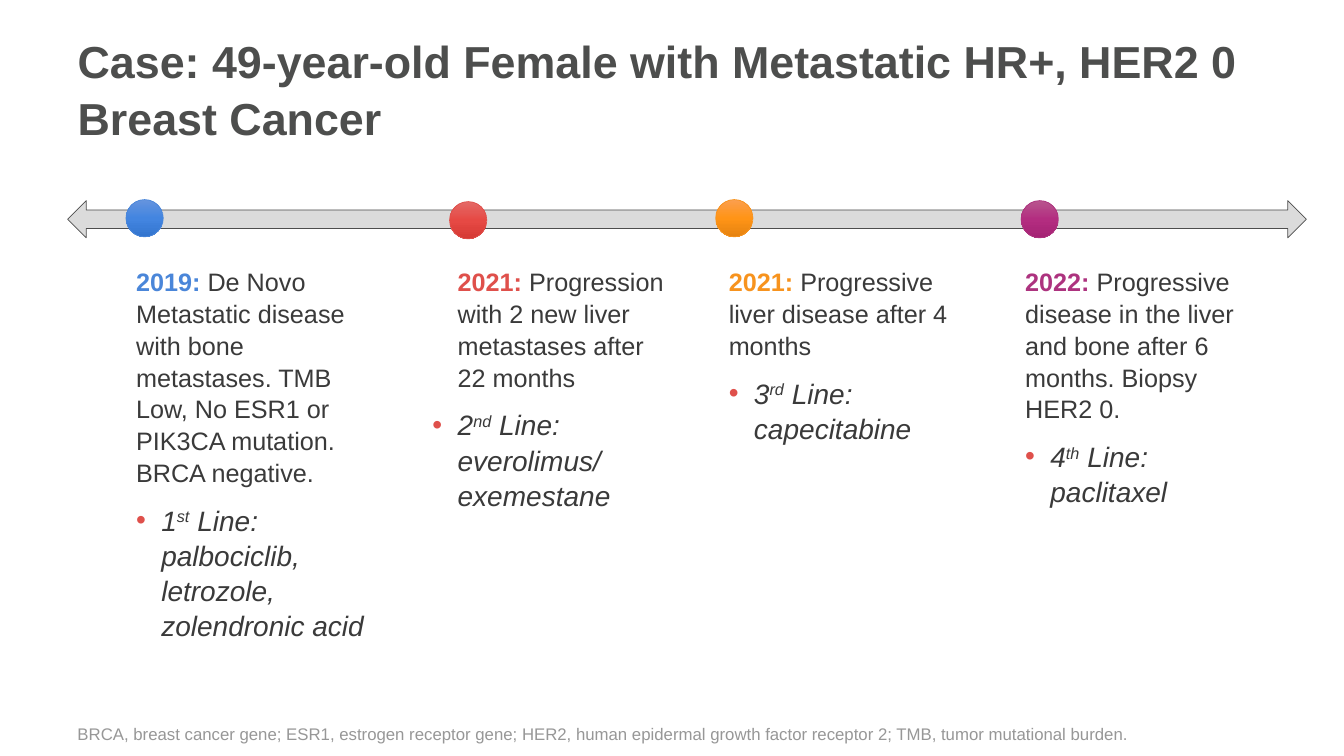
from copy import deepcopy
from lxml.etree import SubElement
from pptx import Presentation
from pptx.dml.color import RGBColor
from pptx.enum.shapes import MSO_SHAPE as SHAPE
from pptx.enum.text import MSO_ANCHOR as ANCHOR, MSO_AUTO_SIZE as FIT, PP_ALIGN as ALIGN
from pptx.oxml.ns import qn
from pptx.util import Inches, Pt

INK, BULLET = "3A3A3A", "DF504B"
MARGIN, WIDTH = 0.67, 11.75
COL_LEFT, COL_TOP, COL_WIDTH, COL_HEIGHT = 1.25, 2.58, 2.64, 3.69
COL_PITCH = 2.94
INDENT, DOT = 0.25, 0.37


def rgb(code):
    return RGBColor.from_string(code)


def write(paragraph, text, size=18, color=INK, bold=False, italic=False, raised=False):
    paragraph.alignment = ALIGN.LEFT
    paragraph.line_spacing = 1.05
    run = paragraph.add_run()
    run.text = text
    font = run.font
    font.name, font.size, font.bold, font.italic = "Arial", Pt(size), bold, italic
    font.color.rgb = rgb(color)
    if raised:
        run._r.get_or_add_rPr().set("baseline", "30000")


prs = Presentation()
prs.slide_width, prs.slide_height = Inches(13.333), Inches(7.5)
slide = prs.slides.add_slide(prs.slide_layouts.get_by_name("Comparison"))
shapes = slide.shapes

# Title
title = shapes.title
title.left, title.top, title.width, title.height = map(Inches, (MARGIN, 0.22, WIDTH, 1.3))
title.text_frame.vertical_anchor = ANCHOR.MIDDLE
title.text_frame.auto_size = FIT.NONE
write(title.text_frame.paragraphs[0],
      "Case: 49-year-old Female with Metastatic HR+, HER2 0 Breast Cancer",
      size=32, color="4D4E4D", bold=True)

# Abbreviations
abbreviations = shapes.add_textbox(*map(Inches, (MARGIN, 6.95, WIDTH, 0.48))).text_frame
abbreviations.word_wrap = True
abbreviations.vertical_anchor = ANCHOR.BOTTOM
write(abbreviations.paragraphs[0],
      "BRCA, breast cancer gene; ESR1, estrogen receptor gene; HER2, human epidermal "
      "growth factor receptor 2; TMB, tumor mutational burden.", size=12, color="979797")

# Timeline arrow
timeline = shapes.add_shape(SHAPE.LEFT_RIGHT_ARROW, *map(Inches, (MARGIN, 1.99, 12.29, DOT)))
timeline.shadow.inherit = False
timeline.fill.solid()
timeline.fill.fore_color.rgb = rgb("DBDBDB")
timeline.line.color.rgb = rgb("4D4D4D")
timeline.line.width = Pt(0.5)

# Year, event, event indent, line number, ordinal, therapy, colour, dot place, dot gradient
stages = [
    ("2019: ", "De Novo Metastatic disease with bone metastases. TMB Low, No ESR1 or "
     "PIK3CA mutation. BRCA negative.", 0, "1", "st", "palbociclib, letrozole, zolendronic acid",
     "4A86D9", (1.25, 1.98), ("6594DE", "4385E0", "3375CF")),
    ("2021: ", "Progression with 2 new liver metastases after 22 months", INDENT,
     "2", "nd", "everolimus/ exemestane",
     "DF504B", (4.46, 2), ("E46966", "E64944", "D53934")),
    ("2021: ", "Progressive liver disease after 4 months", 0, "3", "rd", "capecitabine",
     "F7931E", (7.1, 1.98), ("FB9F4F", "FF9416", "E58311")),
    ("2022: ", "Progressive disease in the liver and bone after 6 months. Biopsy HER2 0.", 0,
     "4", "th", "paclitaxel",
     "AD337F", (10.13, 1.99), ("B8568E", "B32D80", "A52274")),
]

for column, stage in enumerate(stages):
    year, event, event_indent, number, ordinal, therapy, color, place, shades = stage

    # Column of text
    body = slide.placeholders[column + 1]
    body.left, body.top = Inches(COL_LEFT + column * COL_PITCH), Inches(COL_TOP)
    body.width, body.height = Inches(COL_WIDTH), Inches(COL_HEIGHT)
    frame = body.text_frame
    frame.vertical_anchor = ANCHOR.TOP
    frame.auto_size = FIT.NONE

    history = frame.paragraphs[0]
    props = history._p.get_or_add_pPr()
    props.set("marL", str(Inches(event_indent)))
    props.set("indent", "0")
    SubElement(props, qn("a:buNone"))
    history.space_before = Pt(0)
    write(history, year, color=color, bold=True)
    write(history, event)

    treatment = frame.add_paragraph()
    props = treatment._p.get_or_add_pPr()
    props.set("marL", str(Inches(INDENT)))
    props.set("indent", str(-Inches(INDENT)))
    SubElement(SubElement(props, qn("a:buClr")), qn("a:srgbClr"), val=BULLET)
    SubElement(props, qn("a:buFont"), typeface="Arial")
    SubElement(props, qn("a:buChar"), char="•")
    treatment.space_before = Pt(10)
    write(treatment, number, size=20, italic=True)
    write(treatment, ordinal, size=20, italic=True, raised=True)
    write(treatment, f" Line: {therapy}", size=20, italic=True)

    # Dot on the timeline
    dot = shapes.add_shape(SHAPE.OVAL, *map(Inches, (*place, DOT, DOT)))
    dot.shadow.inherit = False
    dot.line.color.rgb = rgb(color)
    dot.line.width = Pt(0.5)
    dot.fill.gradient()
    dot.fill.gradient_angle = 270
    stop_list = dot._element.spPr.find(qn("a:gradFill")).find(qn("a:gsLst"))
    stop_list.append(deepcopy(stop_list[-1]))
    for step, (stop, shade) in enumerate(zip(dot.fill.gradient_stops, shades)):
        stop.position = step / 2
        stop.color.rgb = rgb(shade)

prs.save("out.pptx")
